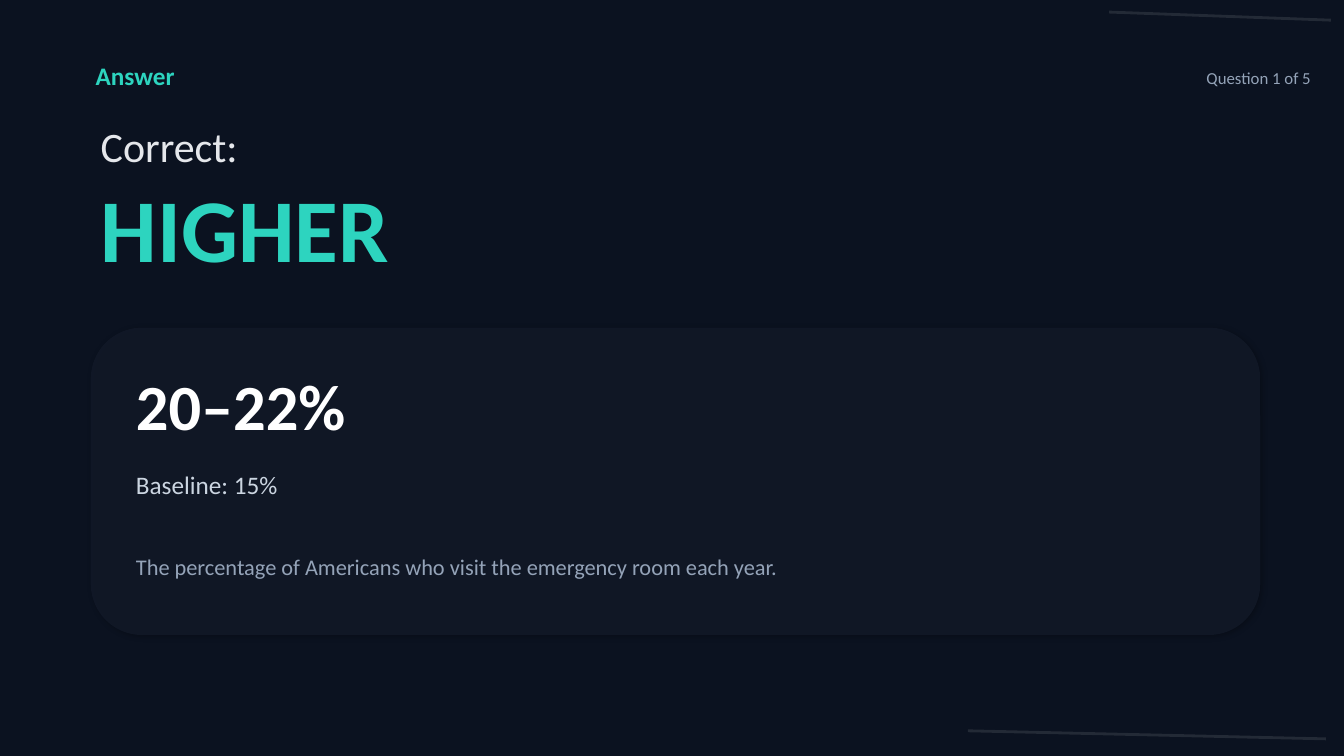
"""Build the answer slide of a higher-or-lower quiz."""
from dataclasses import dataclass

from lxml.etree import SubElement
from pptx import Presentation
from pptx.dml.color import RGBColor
from pptx.enum.shapes import MSO_CONNECTOR, MSO_SHAPE
from pptx.enum.text import MSO_ANCHOR, MSO_AUTO_SIZE, PP_ALIGN
from pptx.oxml.ns import qn
from pptx.util import Inches, Pt


@dataclass(frozen=True)
class Theme:
    """Colours, type sizes and font of the quiz."""
    font: str = "Calibri"
    background: str = "0B1220"
    card: str = "111827"
    shadow: str = "000000"
    accent: str = "2DD4BF"
    white: str = "FFFFFF"
    light: str = "E5E7EB"
    soft: str = "CBD5E1"
    muted: str = "94A3B8"
    verdict_size: int = 64
    figure_size: int = 46
    lead_size: int = 30
    label_size: int = 18
    note_size: int = 16
    counter_size: int = 12


class QuizSlide:
    """Draws styled elements on one slide."""

    def __init__(self, presentation, theme):
        """Add a title-only slide with the theme background."""
        self.theme = theme
        self.slide = presentation.slides.add_slide(presentation.slide_layouts[5])
        fill = self.slide.background.fill
        fill.solid()
        fill.fore_color.rgb = RGBColor.from_string(theme.background)

    def set_text(self, shape, text, size, color, bold=False, align=PP_ALIGN.LEFT):
        """Fill a shape with one styled paragraph."""
        frame = shape.text_frame
        frame.text = text
        frame.word_wrap = True
        frame.auto_size = MSO_AUTO_SIZE.NONE
        frame.vertical_anchor = MSO_ANCHOR.MIDDLE
        paragraph = frame.paragraphs[0]
        paragraph.alignment = align
        font = paragraph.font
        font.name = self.theme.font
        font.size = Pt(size)
        font.bold = bold
        font.color.rgb = RGBColor.from_string(color)

    def title(self, box, text, size, color):
        """Place the bold slide title."""
        shape = self.slide.shapes.title
        shape.left, shape.top, shape.width, shape.height = map(Inches, box)
        self.set_text(shape, text, size, color, bold=True)

    def text(self, box, text, size, color, **style):
        """Add a text box."""
        shape = self.slide.shapes.add_textbox(*map(Inches, box))
        self.set_text(shape, text, size, color, **style)

    def set_alpha(self, color_element, percent):
        """Make a colour element partly transparent."""
        SubElement(color_element, qn("a:alpha"), val=str(percent * 1000))

    def accent_line(self, start, end):
        """Add a faint decorative line."""
        line = self.slide.shapes.add_connector(
            MSO_CONNECTOR.STRAIGHT, *map(Inches, start + end))
        line.line.width = Pt(2)
        line.line.color.rgb = RGBColor.from_string(self.theme.white)
        properties = line._element.spPr
        self.set_alpha(properties.find(".//" + qn("a:srgbClr")), 10)
        SubElement(properties, qn("a:effectLst"))

    def card(self, box):
        """Add a translucent rounded card with a soft shadow."""
        card = self.slide.shapes.add_shape(
            MSO_SHAPE.ROUNDED_RECTANGLE, *map(Inches, box))
        card.fill.solid()
        card.fill.fore_color.rgb = RGBColor.from_string(self.theme.card)
        card.line.fill.background()
        card.shadow.inherit = False
        properties = card._element.spPr
        self.set_alpha(properties.find(".//" + qn("a:srgbClr")), 92)
        shadow = SubElement(
            properties.find(qn("a:effectLst")), qn("a:outerShdw"),
            blurRad=str(Pt(4)), dist=str(Pt(2)), dir=str(45 * 60000),
            algn="ctr", rotWithShape="0")
        shadow_color = SubElement(shadow, qn("a:srgbClr"), val=self.theme.shadow)
        self.set_alpha(shadow_color, 25)


def main():
    """Build and save the slide."""
    presentation = Presentation()
    presentation.slide_width = Inches(13.33)
    presentation.slide_height = Inches(7.5)
    theme = Theme()
    quiz = QuizSlide(presentation, theme)

    quiz.accent_line((9.6, 7.25), (13.15, 7.33))
    quiz.accent_line((11, 0.12), (13.2, 0.2))

    quiz.text((0.85, 0.55, 6, 0.4), "Answer",
              theme.label_size, theme.accent, bold=True)
    quiz.text((9, 0.62, 4.1, 0.3), "Question 1 of 5",
              theme.counter_size, theme.muted, align=PP_ALIGN.RIGHT)
    quiz.text((0.9, 1.25, 12, 0.4), "Correct:", theme.lead_size, theme.light)
    quiz.title((0.9, 1.7, 12, 1.1), "HIGHER", theme.verdict_size, theme.accent)

    quiz.card((0.9, 3.25, 11.6, 3.05))
    quiz.text((1.25, 3.52, 10.9, 1), "20–22%",
              theme.figure_size, theme.white, bold=True)
    quiz.text((1.25, 4.58, 10.9, 0.45), "Baseline: 15%",
              theme.label_size, theme.soft)
    quiz.text((1.25, 5.15, 10.9, 0.95),
              "The percentage of Americans who visit the emergency room each year.",
              theme.note_size, theme.muted)

    presentation.save("out.pptx")


if __name__ == "__main__":
    main()
